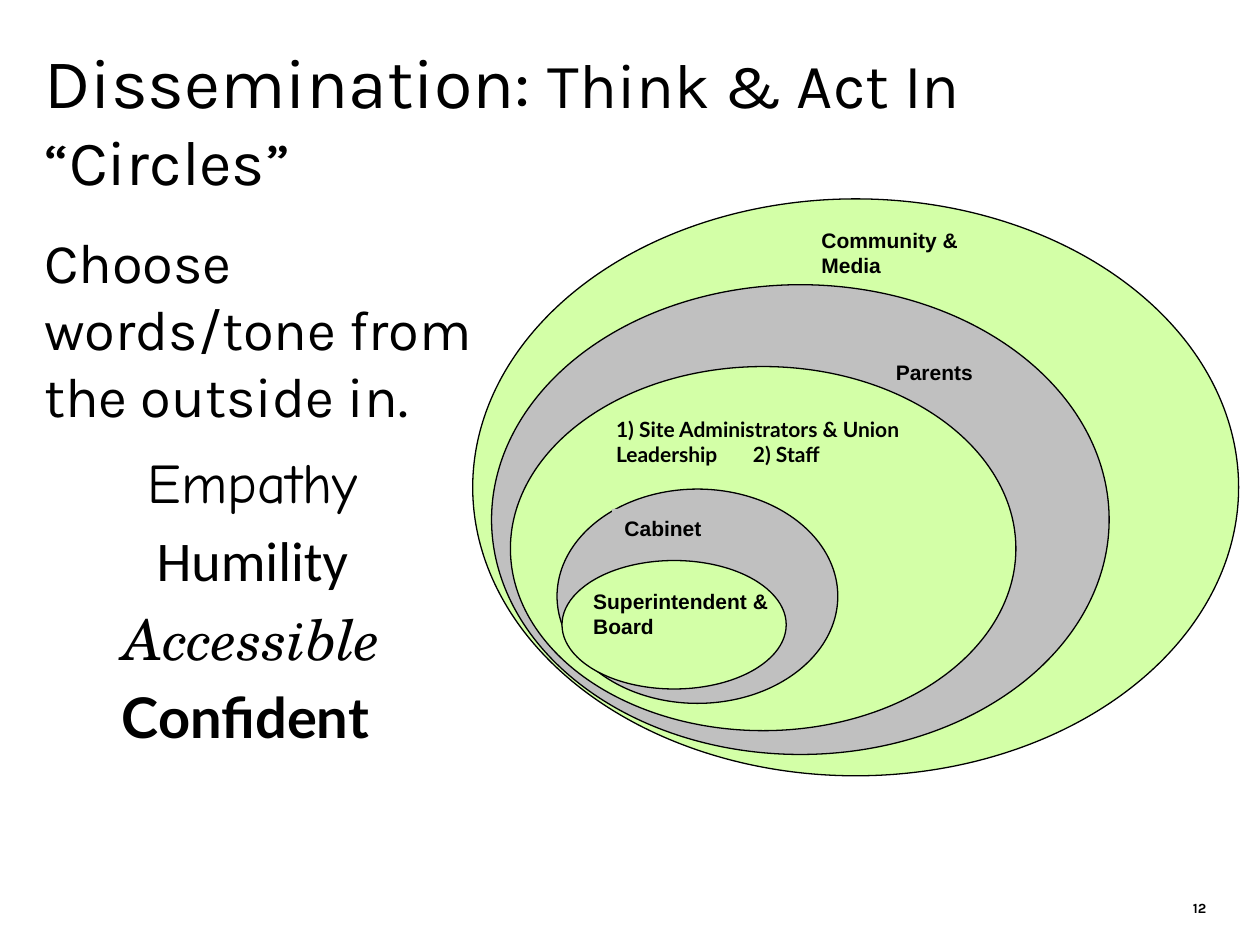
from dataclasses import dataclass, field

from lxml.etree import SubElement
from pptx import Presentation
from pptx.dml.color import RGBColor
from pptx.enum.shapes import MSO_SHAPE as Preset
from pptx.enum.text import MSO_ANCHOR as Anchor, PP_ALIGN as Align
from pptx.oxml.ns import qn
from pptx.util import Cm, Pt

COLORS = {"ink": "000000", "green": "D3FFA7", "gray": "C0C0C0"}
FRAME_FORMAT = {
    "word_wrap": True,
    "vertical_anchor": Anchor.TOP,
    "margin_left": Cm(0.25),
    "margin_right": Cm(0.25),
    "margin_top": Cm(0.13),
    "margin_bottom": Cm(0.13),
}
LABEL_TAB = Cm(2.76)


@dataclass
class Box:
    left: float
    top: float
    width: float
    height: float

    def lengths(self) -> list:
        return [Cm(n) for n in (self.left, self.top, self.width, self.height)]


@dataclass
class Span:
    text: str
    size: float
    font: str
    bold: bool = False
    italic: bool = False


@dataclass
class Circle:
    area: Box
    color: str
    label_area: Box
    label: list
    font: str = "Arial"
    label_filled: bool = False


@dataclass
class Block:
    area: Box
    paragraphs: list
    align: Align = Align.LEFT
    space_before: float = 0
    frame: dict = field(default_factory=dict)


def rgb(name: str) -> RGBColor:
    return RGBColor.from_string(COLORS[name])


def assign(target, values: dict) -> None:
    for key, value in values.items():
        setattr(target, key, value)


def write_text(holder, block: Block) -> None:
    frame = holder.text_frame
    assign(frame, FRAME_FORMAT | block.frame)
    for index, spans in enumerate(block.paragraphs):
        paragraph = frame.add_paragraph() if index else frame.paragraphs[0]
        paragraph.alignment = block.align
        paragraph.space_before = Pt(block.space_before if index else 0)
        if any("\t" in span.text for span in spans):
            stops = SubElement(paragraph._p.get_or_add_pPr(), qn("a:tabLst"))
            SubElement(stops, qn("a:tab"), pos=str(LABEL_TAB), algn="l")
        for span in spans:
            run = paragraph.add_run()
            run.text = span.text
            assign(run.font, {"name": span.font, "size": Pt(span.size),
                              "bold": span.bold, "italic": span.italic})
            run.font.color.rgb = rgb("ink")


def add_filled(slide, preset: Preset, area: Box, color: str, outlined: bool):
    shape = slide.shapes.add_shape(preset, *area.lengths())
    shape.shadow.inherit = False
    shape.fill.solid()
    shape.fill.fore_color.rgb = rgb(color)
    if outlined:
        shape.line.color.rgb = rgb("ink")
        shape.line.width = Pt(0.75)
    else:
        shape.line.fill.background()
    return shape


def add_block(slide, block: Block) -> None:
    write_text(slide.shapes.add_textbox(*block.area.lengths()), block)


def add_circle(slide, circle: Circle) -> None:
    add_filled(slide, Preset.OVAL, circle.area, circle.color, True)
    label = Block(circle.label_area,
                  [[Span(line, 12, circle.font, bold=True)] for line in circle.label])
    if circle.label_filled:
        patch = add_filled(slide, Preset.RECTANGLE, label.area, circle.color, False)
        write_text(patch, label)
    else:
        add_block(slide, label)


CIRCLES = [
    Circle(Box(9.53, 4.01, 15.44, 11.63), "green", Box(16.31, 4.45, 3.38, 1.3),
           ["Community &", "Media"], label_filled=True),
    Circle(Box(9.91, 5.74, 12.45, 9.47), "gray", Box(17.81, 7.11, 2.26, 0.86),
           ["Parents"]),
    Circle(Box(10.29, 7.39, 10.19, 7.34), "green", Box(12.17, 8.26, 7.16, 1.73),
           ["1) Site Administrators & Union Leadership\t2) Staff"], font="Lato"),
    Circle(Box(11.23, 9.86, 5.66, 4.32), "gray", Box(12.34, 10.26, 2.64, 0.86),
           ["Cabinet"], label_filled=True),
    Circle(Box(11.33, 11.3, 4.52, 2.59), "green", Box(11.71, 11.73, 4.52, 1.73),
           ["Superintendent &", "Board"]),
]

BLOCKS = [
    Block(Box(0.64, 0.64, 23.93, 2.97),
          [[Span("Dissemination: ", 40, "Karla"),
            Span("Think & Act In “Circles”", 36, "Karla")]]),
    Block(Box(0.64, 4.45, 9.96, 3.18),
          [[Span("Choose words/tone from the outside in.", 32, "Karla")]]),
    Block(Box(1.7, 8.89, 6.78, 6.35),
          [[Span("Empathy", 32, "Comic Neue")],
           [Span("Humility", 32, "Calibri")],
           [Span("Accessible", 32, "TeX Gyre Schola", italic=True)],
           [Span("Confident ", 32, "Lato", bold=True)]],
          align=Align.CENTER, space_before=6.4),
    Block(Box(23.06, 16.94, 1.96, 1.6), [[Span("12", 8, "Karla", bold=True)]],
          frame={"vertical_anchor": Anchor.BOTTOM, "margin_left": Cm(0.99),
                 "margin_right": Cm(0), "margin_top": Cm(0.61),
                 "margin_bottom": Cm(0.41)}),
]


def main() -> None:
    deck = Presentation()
    assign(deck, {"slide_width": Cm(25.4), "slide_height": Cm(19.05)})
    slide = deck.slides.add_slide(deck.slide_layouts[6])
    for circle in CIRCLES:
        add_circle(slide, circle)
    for block in BLOCKS:
        add_block(slide, block)
    deck.save("out.pptx")


if __name__ == "__main__":
    main()
